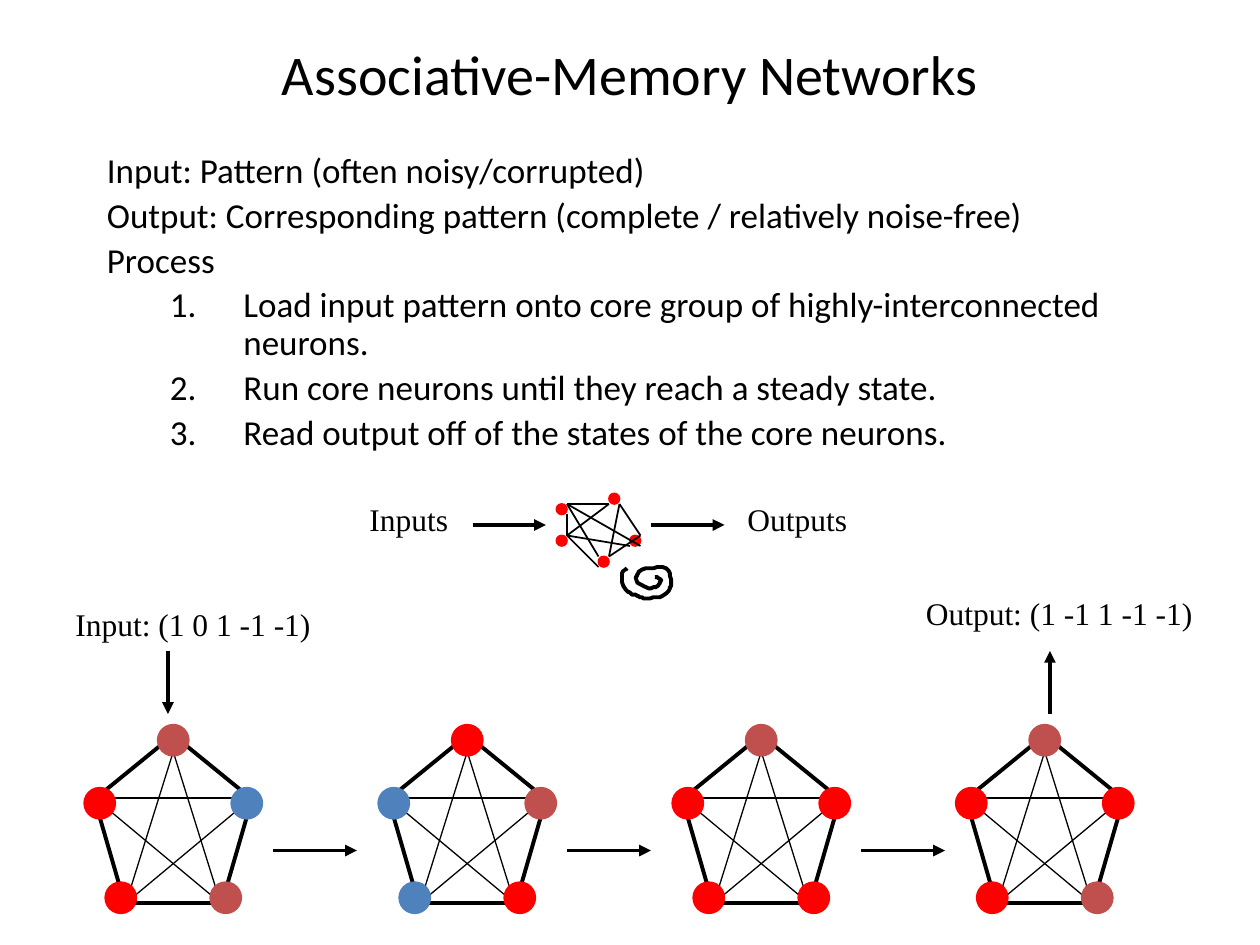
from lxml.etree import SubElement
from pptx import Presentation
from pptx.dml.color import RGBColor
from pptx.enum.shapes import MSO_CONNECTOR as CONN, MSO_SHAPE as SHAPE
from pptx.enum.text import MSO_ANCHOR as ANCHOR, PP_ALIGN as ALIGN
from pptx.oxml.ns import qn
from pptx.util import Inches, Pt

COLORS = {"black": "000000", "red": "FF0000", "brick": "C0504D", "blue": "4F81BD"}
UNIT = Inches(1) / 12
COLS, ROWS = 120, 90
SANS, SERIF = "Calibri", "Times New Roman"

INTRO = ["Input: Pattern (often noisy/corrupted)",
         "Output: Corresponding pattern (complete / relatively noise-free)",
         "Process"]
STEPS = ["Load input pattern onto core group of highly-interconnected neurons.",
         "Run core neurons until they reach a steady state.",
         "Read output off of the states of the core neurons."]

CORE_NODES = [(0, 1), (0, 4), (4, 6), (7, 4), (5, 0)]
CORE_LINKS = [(5, 6, 6, 1), (1, 4, 1, 2), (4, 6, 1, 1), (5, 6, 8, 4), (8, 4, 6, 1),
              (1, 4, 5, 1), (1, 1, 5, 1), (1, 4, 7, 5), (8, 5, 1, 1), (4, 7, 1, 4)]
SPIRAL = [(6, 1), (5, 2), (4, 2), (3, 3), (0, 6), (2, 17), (7, 20), (9, 21), (12, 22),
          (14, 23), (16, 24), (20, 25), (20, 25), (28, 24), (31, 25), (37, 21),
          (41, 15), (40, 18), (41, 14), (40, 6), (41, 2), (34, 0), (25, 1), (22, 0),
          (15, 4), (15, 6), (13, 7), (13, 9), (15, 15), (18, 15), (23, 17), (24, 17),
          (30, 16), (31, 15), (32, 14), (33, 10), (33, 10), (29, 8), (31, 8), (28, 8)]

NET_NODES = [(7, 0), (14, 6), (12, 15), (2, 15), (0, 6)]
NET_LINKS = [(4, 17, 9, 1), (13, 17, 1, 7), (1, 7, 16, 7), (16, 7, 4, 17), (8, 1, 13, 17)]
NETS = [(8, ["brick", "blue", "brick", "red", "red"]),
        (36, ["red", "brick", "red", "blue", "blue"]),
        (64, ["brick", "red", "red", "red", "red"]),
        (91, ["brick", "red", "brick", "red", "red"])]


def grid(*values):
    return [round(v * UNIT) for v in values]


def rgb(name):
    return RGBColor.from_string(COLORS[name])


def set_line(s, width, color="black"):
    s.line.width = Pt(width)
    s.line.color.rgb = rgb(color)


def set_font(p, size, name):
    for r in p.runs:
        r.font.size = Pt(size)
        r.font.name = name
        r.font.color.rgb = rgb("black")


def add_line(shapes, x1, y1, x2, y2, width, arrow=False):
    s = shapes.add_connector(CONN.STRAIGHT, *grid(x1, y1, x2, y2))
    set_line(s, width)
    if arrow:
        SubElement(s.line._get_or_add_ln(), qn("a:tailEnd"), type="triangle")
    SubElement(s._element.spPr, qn("a:effectLst"))


def add_node(shapes, x, y, size, color, width):
    s = shapes.add_shape(SHAPE.OVAL, *grid(x, y, size, size))
    s.shadow.inherit = False
    s.fill.solid()
    s.fill.fore_color.rgb = rgb(color)
    set_line(s, width, color)


def add_label(shapes, text, x, y, w):
    s = shapes.add_textbox(*grid(x, y, w, 4.8))
    s.text_frame.word_wrap = False
    s.text_frame.text = text
    set_font(s.text_frame.paragraphs[0], 18, SERIF)


def add_title(slide, text, x, y, w, h):
    s = slide.shapes.title
    s.left, s.top, s.width, s.height = grid(x, y, w, h)
    tf = s.text_frame
    tf.text = text
    tf.vertical_anchor = ANCHOR.MIDDLE
    tf.paragraphs[0].alignment = ALIGN.CENTER
    set_font(tf.paragraphs[0], 32, SANS)


def add_body(slide, x, y, w, h):
    tf = slide.shapes.add_textbox(*grid(x, y, w, h)).text_frame
    tf.word_wrap = True
    tf.text = "\n".join(INTRO + STEPS)
    for i, p in enumerate(tf.paragraphs):
        numbered = i >= len(INTRO)
        margin, hang = (13, 7) if numbered else (8, 8)
        p.level = int(numbered)
        p.line_spacing = 0.9
        p.space_before = Pt(4)
        pPr = p._p.get_or_add_pPr()
        pPr.set("marL", str(grid(margin)[0]))
        pPr.set("indent", str(-grid(hang)[0]))
        if numbered:
            SubElement(pPr, qn("a:buAutoNum"), type="arabicPeriod")
        set_font(p, 20, SANS)


def bezier(points, t):
    a, b, c, d = points
    u = 1 - t
    return tuple(u**3 * a[i] + 3 * u * u * t * b[i] + 3 * u * t * t * c[i] + t**3 * d[i]
                 for i in (0, 1))


def add_spiral(shapes, x, y):
    steps = 6
    points = [bezier(SPIRAL[i:i + 4], k / steps)
              for i in range(0, len(SPIRAL) - 1, 3) for k in range(1, steps + 1)]
    builder = shapes.build_freeform(*SPIRAL[0], scale=Inches(0.01))
    builder.add_line_segments(points, close=False)
    s = builder.convert_to_shape(*grid(x, y))
    s.shadow.inherit = False
    s.fill.background()
    set_line(s, 2.25)


def add_core(slide, x, y):
    shapes = slide.shapes.add_group_shape().shapes
    for dx, dy in CORE_NODES:
        add_node(shapes, x + dx, y + dy, 1, "red", 1)
    for x1, y1, x2, y2 in CORE_LINKS:
        add_line(shapes, x + x1, y + y1, x + x2, y + y2, 1)
    add_label(shapes, "Inputs", x - 19, y, 10)
    add_label(shapes, "Outputs", x + 17, y, 11.9)
    for start in (x - 8, x + 9):
        add_line(shapes, start, y + 3, start + 7, y + 3, 2.25, arrow=True)
    add_spiral(shapes, x + 6, y + 7)


def add_net(slide, x, y, colors):
    shapes = slide.shapes.add_group_shape().shapes
    s = shapes.add_shape(SHAPE.REGULAR_PENTAGON, *grid(x + 1, y + 1, 15, 16))
    s.shadow.inherit = False
    s.fill.background()
    set_line(s, 2.25)
    for x1, y1, x2, y2 in NET_LINKS:
        add_line(shapes, x + x1, y + y1, x + x2, y + y2, 0.75)
    for (dx, dy), color in zip(NET_NODES, colors):
        add_node(shapes, x + dx, y + dy, 3, color, 0.75)


def add_sequence(slide, y):
    for x, colors in NETS:
        add_net(slide, x, y, colors)
    for x, _ in NETS[:-1]:
        add_line(slide.shapes, x + 18, y + 12, x + 26, y + 12, 2.25, arrow=True)
    add_label(slide.shapes, "Input: (1 0 1 -1 -1)", 6, y - 12, 24.8)
    add_line(slide.shapes, 16, y - 7, 16, y - 1, 2.25, arrow=True)
    add_label(slide.shapes, "Output: (1 -1 1 -1 -1)", 87, y - 13, 27.8)
    add_line(slide.shapes, 100, y - 1, 100, y - 7, 2.25, arrow=True)


def main():
    prs = Presentation()
    prs.slide_width, prs.slide_height = grid(COLS, ROWS)
    slide = prs.slides.add_slide(prs.slide_layouts[5])
    add_title(slide, "Associative-Memory Networks", 9, 3, 102, 8)
    add_body(slide, 9, 14, 102, 33)
    add_core(slide, 53, 47)
    add_sequence(slide, 69)
    prs.save("out.pptx")


if __name__ == "__main__":
    main()
